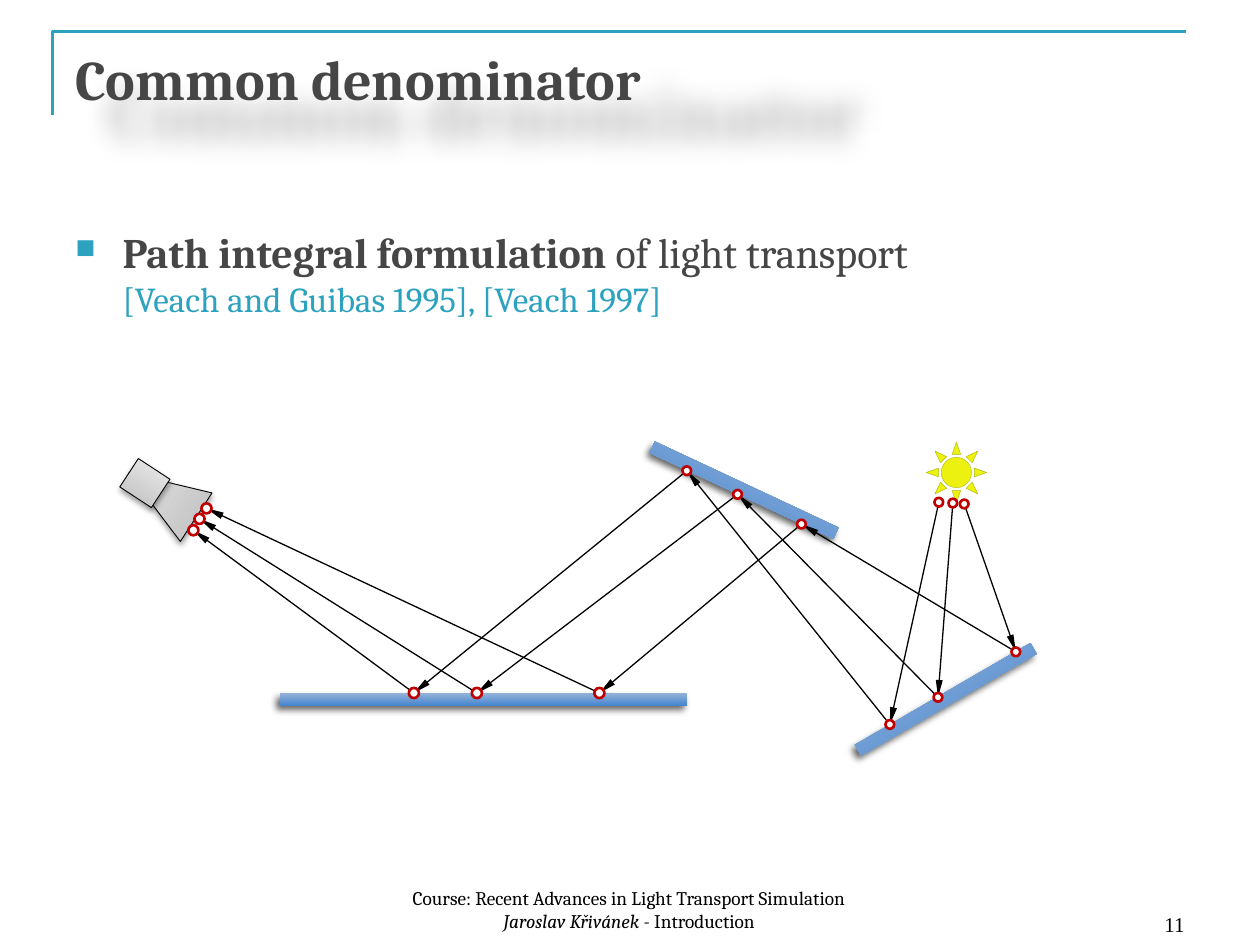
from lxml import etree
from pptx import Presentation
from pptx import util as u
from pptx.dml.color import RGBColor
from pptx.enum import shapes, text
from pptx.oxml import ns

Pt = u.Pt
COLORS = {
    "accent": "2DA2BF", "text": "464646", "black": "000000", "white": "FFFFFF",
    "dot": "C00000", "sun": "ECF10F", "sun_edge": "B4B70B",
    "mirror_light": "95B3D7", "mirror_dark": "4785D1",
    "camera_dark": "BDBDBD", "camera_light": "EEEEEE",
}
LIGHT_PATHS = [
    [(464.5, 35), (436.5, 162), (320.5, 17), (164.5, 144), (38.5, 51)],
    [(472.5, 35.5), (464, 146.5), (349.5, 30.5), (200.5, 144), (42, 44.5)],
    [(479, 36), (508.5, 120.5), (386, 47.5), (270.5, 144), (46, 38.5)],
]
MIRRORS = [
    (410.4, 144, 116, 7.2, 149.9),
    (295.2, 24.5, 116, 7.2, 205.1),
    (87.8, 144, 232.6, 7.2, 180),
]
BREAK = ("\n", {})


def color(name):
    """Return the named colour."""
    return RGBColor.from_string(COLORS[name])


def add_child(parent, tag, **attributes):
    """Append a DrawingML element and return it."""
    element = etree.SubElement(parent, ns.qn(tag))
    for key, value in attributes.items():
        element.set(key, str(value))
    return element


def add_shadow(shape, opacity, blur, distance, angle, **scale):
    """Give a shape a black outer shadow."""
    shape.shadow.inherit = False
    effects = shape._element.spPr.find(ns.qn("a:effectLst"))
    outer = add_child(effects, "a:outerShdw", blurRad=Pt(blur), dist=Pt(distance),
                      dir=angle * 60000, **scale, algn="tl", rotWithShape=0)
    black = add_child(outer, "a:srgbClr", val=COLORS["black"])
    add_child(black, "a:alpha", val=opacity * 1000)


def add_text(slide, box, runs, size, fill="black", font="Cambria", align="LEFT",
             anchor="TOP"):
    """Add a one-paragraph text box from (text, format) runs."""
    shape = slide.shapes.add_textbox(*map(Pt, box))
    frame = shape.text_frame
    frame.word_wrap = True
    frame.vertical_anchor = text.MSO_ANCHOR[anchor]
    paragraph = frame.paragraphs[0]
    paragraph.alignment = text.PP_ALIGN[align]
    for words, style in runs:
        if words == "\n":
            paragraph.add_line_break()
            continue
        run = paragraph.add_run()
        run.text = words
        run.font.name = font
        run.font.size = Pt(style.get("size", size))
        run.font.bold = style.get("bold", False)
        run.font.italic = style.get("italic", False)
        run.font.color.rgb = color(style.get("fill", fill))
    return shape


def add_shape(slide, kind, box, fill, line=None, width=0.5, rotation=0):
    """Add a preset shape with a solid or two-colour gradient fill."""
    shape = slide.shapes.add_shape(shapes.MSO_SHAPE[kind], *map(Pt, box))
    shape.rotation = rotation
    shape.shadow.inherit = False
    if isinstance(fill, tuple):
        shape.fill.gradient()
        shape.fill.gradient_angle = 90
        for stop, name in zip(shape.fill.gradient_stops, fill):
            stop.color.rgb = color(name)
        for stop, position in zip(shape.fill.gradient_stops, (0, 1)):
            stop.position = position
    else:
        shape.fill.solid()
        shape.fill.fore_color.rgb = color(fill)
    if line:
        shape.line.color.rgb = color(line)
        shape.line.width = Pt(width)
    else:
        shape.line.fill.background()
    return shape


def add_ray(slide, start, end):
    """Add an arrow between two points."""
    ray = slide.shapes.add_connector(shapes.MSO_CONNECTOR.STRAIGHT,
                                     *map(Pt, start + end))
    ray.line.color.rgb = color("black")
    ray.line.width = Pt(0.75)
    add_child(ray.line._get_or_add_ln(), "a:tailEnd", type="triangle", w="sm", len="lg")
    add_child(ray._element.spPr, "a:effectLst")


def add_header(slide, left, top, width):
    """Add the corner rule and the title."""
    builder = slide.shapes.build_freeform(Pt(left), Pt(top + 48))
    builder.add_line_segments([(Pt(left), Pt(top)), (Pt(left + width), Pt(top))],
                              close=False)
    rule = builder.convert_to_shape()
    rule.shadow.inherit = False
    rule.fill.background()
    rule.line.color.rgb = color("accent")
    rule.line.width = Pt(1.5)
    title = add_text(slide, (left + 6, top + 3.6, width, 90),
                     [("Common denominator", {"bold": True})], 32, fill="text")
    add_shadow(title, 25, 15, 20, 34, sx=133000, sy=133000)


def add_body(slide, box):
    """Add the bulleted statement with its references."""
    shape = add_text(slide, box, [
        ("Path integral formulation", {"bold": True}),
        (" of light transport", {}),
        BREAK,
        ("[Veach and Guibas 1995], [Veach 1997]", {"size": 20, "fill": "accent"}),
    ], 24, fill="text")
    paragraph = shape.text_frame.paragraphs[0]
    paragraph.space_before = Pt(4.8)
    properties = paragraph._p.get_or_add_pPr()
    properties.set("marL", str(Pt(27)))
    properties.set("indent", str(Pt(-27)))
    add_child(add_child(properties, "a:buClr"), "a:srgbClr", val=COLORS["accent"])
    add_child(properties, "a:buSzPct", val=65000)
    add_child(properties, "a:buChar", char="■")


def add_diagram(slide, left, top):
    """Add camera, mirrors, sun and the three light paths."""
    def place(x, y, *rest):
        return (left + x, top + y, *rest)

    metal = ("camera_dark", "camera_light")
    for kind, box, rotation in [("ISOSCELES_TRIANGLE", (4.3, 7.9, 33.1, 46.1), 303.2),
                                ("RECTANGLE", (0, 14.4, 21.6, 19.4), 33.2)]:
        part = add_shape(slide, kind, place(*box), metal, "black", 0.5, rotation)
        add_shadow(part, 38, 3.5, 2, 90)
    for x, y, width, height, rotation in MIRRORS:
        mirror = add_shape(slide, "RECTANGLE", place(x, y, width, height),
                           ("mirror_light", "mirror_dark"), rotation=rotation)
        add_shadow(mirror, 60, 4, 3, 129)
    add_shape(slide, "SUN", place(457.2, 0.7, 34.6, 34.6), "sun", "sun_edge", 0.25)
    paths = [[place(*point) for point in path] for path in LIGHT_PATHS]
    for path in paths:
        for start, end in zip(path, path[1:]):
            add_ray(slide, start, end)
    for path in paths:
        for (x, y), size in zip(path, (5, 5, 5, 5.8, 5.8)):
            add_shape(slide, "OVAL", (x - size / 2, y - size / 2, size, size),
                      "white", "dot", 1.5)


def add_footer(slide, left, top):
    """Add the course line and the page number."""
    add_text(slide, (left + 406, top + 2.2, 168, 36), [("11", {})], 12,
             font="Times New Roman", align="RIGHT", anchor="BOTTOM")
    add_text(slide, (left, top, 499, 36), [
        ("Course: Recent Advances in Light Transport Simulation", {}),
        BREAK,
        ("Jaroslav Křivánek ", {"italic": True}),
        ("- Introduction", {}),
    ], 11, align="CENTER", anchor="BOTTOM")


def main():
    """Build and save the presentation."""
    presentation = Presentation()
    presentation.slide_width, presentation.slide_height = Pt(720), Pt(540)
    slide = presentation.slides.add_slide(presentation.slide_layouts[6])
    add_header(slide, 30, 18, 648)
    add_body(slide, (36, 126, 648, 356.4))
    add_diagram(slide, 72, 252)
    add_footer(slide, 110, 500.4)
    presentation.save("out.pptx")


if __name__ == "__main__":
    main()
